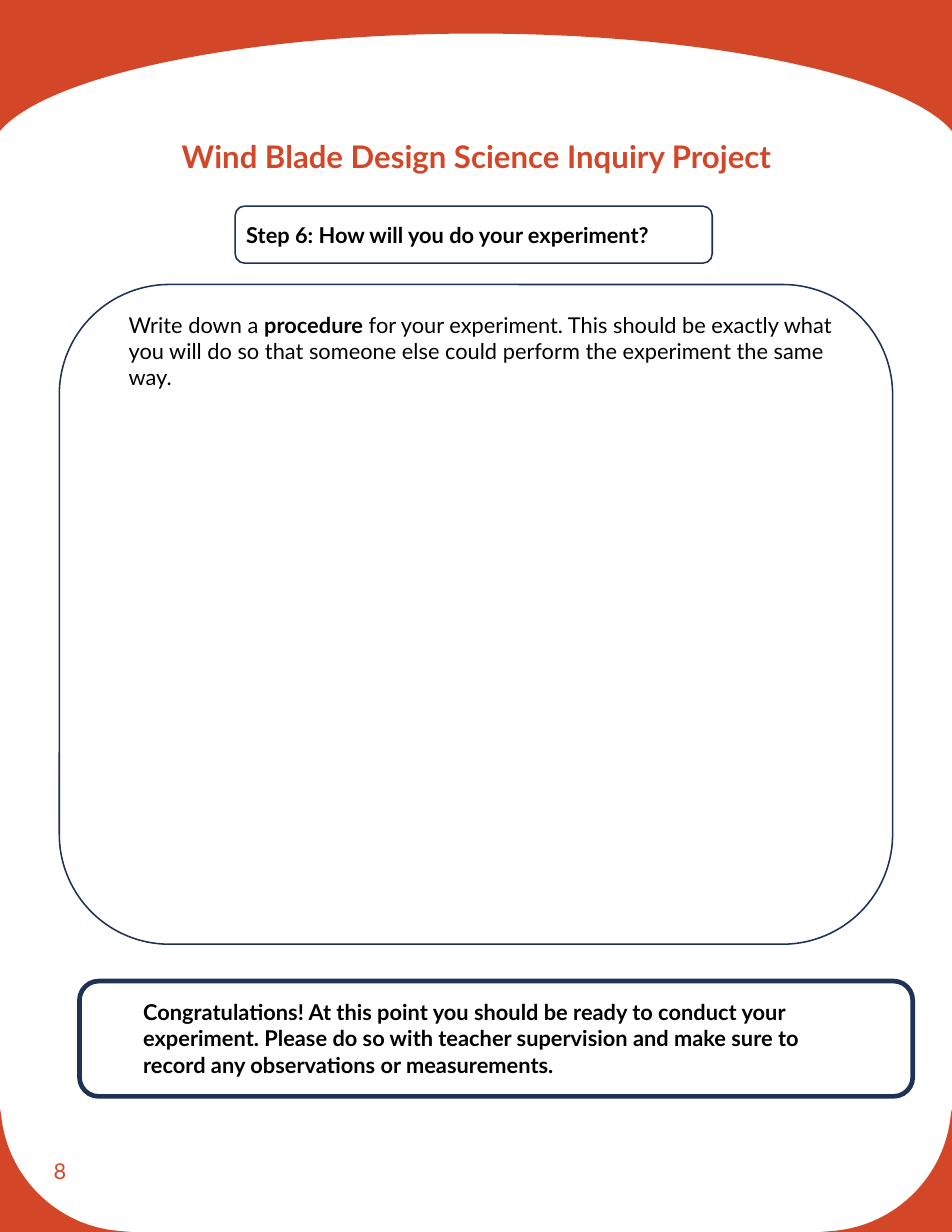
from lxml import etree
from pptx import Presentation
from pptx.dml.color import RGBColor
from pptx.enum import shapes, text
from pptx.oxml.ns import qn
from pptx.util import Inches, Pt

# Content
TITLE = "Wind Blade Design Science Inquiry Project"
PAGE = "8"
TASK = [
    ("Write down a ", False),
    ("procedure", True),
    (" for your experiment. This should be exactly what you will do so that "
     "someone else could perform the experiment the same way.", False),
]
STEP = [("Step 6: How will you do your experiment?", True)]
DONE = [("Congratulations! At this point you should be ready to conduct your "
         "experiment. Please do so with teacher supervision and make sure to "
         "record any observations or measurements.", True)]

# Frame box, line width, text box, runs, grouped or not
CARDS = [
    ((0.53, 2.54, 7.44, 5.89), 1, (1.05, 2.73, 6.5, 0.81), TASK, True),
    ((2.1, 1.84, 4.26, 0.51), 1, (2.1, 1.93, 4.68, 0.34), STEP, True),
    ((0.71, 8.76, 7.44, 1.03), 3, (1.18, 8.87, 6.5, 0.81), DONE, False),
]

THEME = {
    "font": "Lato", "title": 20, "body": 14,
    "accent": RGBColor.from_string("D34728"),
    "frame": RGBColor.from_string("1E3256"),
    "ink": RGBColor.from_string("000000"),
}
WIDE, HIGH = 8.5, 11

# Outlines: a point is a line end, a triple of points is a cubic curve
ARCH = [
    (0, 0), (WIDE, 0), (WIDE, 1.18), (WIDE, 1.17),
    ((8.09, 0.68), (6.34, 0.3), (4.25, 0.3)),
    ((2.16, 0.3), (0.41, 0.68), (0, 1.17)),
    (0, 1.18),
]
CORNER = [
    (0, 9.9), (0.01, 9.95),
    ((0.06, 10.5), (0.5, 10.94), (1.05, 10.99)),
    (1.17, HIGH), (0, HIGH),
]

deck = Presentation()
deck.slide_width, deck.slide_height = Inches(WIDE), Inches(HIGH)
slide = deck.slides.add_slide(deck.slide_layouts[5])


def write(shape, runs, size=THEME["body"], color=THEME["ink"],
          align=text.PP_ALIGN.LEFT, anchor=text.MSO_ANCHOR.TOP, space=None,
          fit=text.MSO_AUTO_SIZE.NONE):
    frame = shape.text_frame
    frame.word_wrap = True
    frame.auto_size = fit
    frame.vertical_anchor = anchor
    para = frame.paragraphs[0]
    para.alignment, para.line_spacing = align, space
    for words, bold in runs:
        run = para.add_run()
        run.text = words
        font = run.font
        font.name, font.size, font.bold = THEME["font"], Pt(size), bold
        font.color.rgb = color


def label(home, box, runs, **style):
    write(home.add_textbox(*map(Inches, box)), runs, **style)


def mirror(part):
    if isinstance(part[0], tuple):
        return tuple(mirror(dot) for dot in part)
    return WIDE - part[0], part[1]


def patch(parts):
    """Draw the outline with lines, then merge each triple into a curve."""
    dots, curved = [], []
    for part in parts:
        if isinstance(part[0], tuple):
            curved.append(len(dots) - 1)
            dots.extend(part)
        else:
            dots.append(part)
    dots = [(Inches(x), Inches(y)) for x, y in dots]
    pen = slide.shapes.build_freeform(*dots[0], scale=1.0)
    pen.add_line_segments(dots[1:], close=True)
    shape = pen.convert_to_shape()
    lines = list(shape.element.iter(qn("a:lnTo")))
    for at in curved:
        bend = etree.Element(qn("a:cubicBezTo"))
        lines[at].addprevious(bend)
        for line in lines[at:at + 3]:
            bend.append(line[0])
            line.getparent().remove(line)
    shape.shadow.inherit = False
    shape.fill.solid()
    shape.fill.fore_color.rgb = THEME["accent"]
    shape.line.fill.background()


# Top arch and bottom corners
patch(ARCH)
patch(CORNER)
patch([mirror(part) for part in CORNER])

# Page number and title
label(slide.shapes, (0.38, 10.16, 1.91, 0.59), [(PAGE, False)],
      color=THEME["accent"], anchor=text.MSO_ANCHOR.MIDDLE)
title = slide.shapes.title
title.left, title.top, title.width, title.height = map(
    Inches, (0.36, 1.08, 7.79, 0.86))
write(title, [(TITLE, True)], size=THEME["title"], color=THEME["accent"],
      align=text.PP_ALIGN.CENTER, space=1.3)
title.element.getparent().append(title.element)

# Framed cards
for box, line, area, runs, grouped in CARDS:
    home = slide.shapes.add_group_shape().shapes if grouped else slide.shapes
    card = home.add_shape(shapes.MSO_SHAPE.ROUNDED_RECTANGLE,
                          *map(Inches, box))
    card.shadow.inherit = False
    card.fill.background()
    card.line.color.rgb, card.line.width = THEME["frame"], Pt(line)
    label(home, area, runs, fit=text.MSO_AUTO_SIZE.SHAPE_TO_FIT_TEXT)

deck.save("out.pptx")
